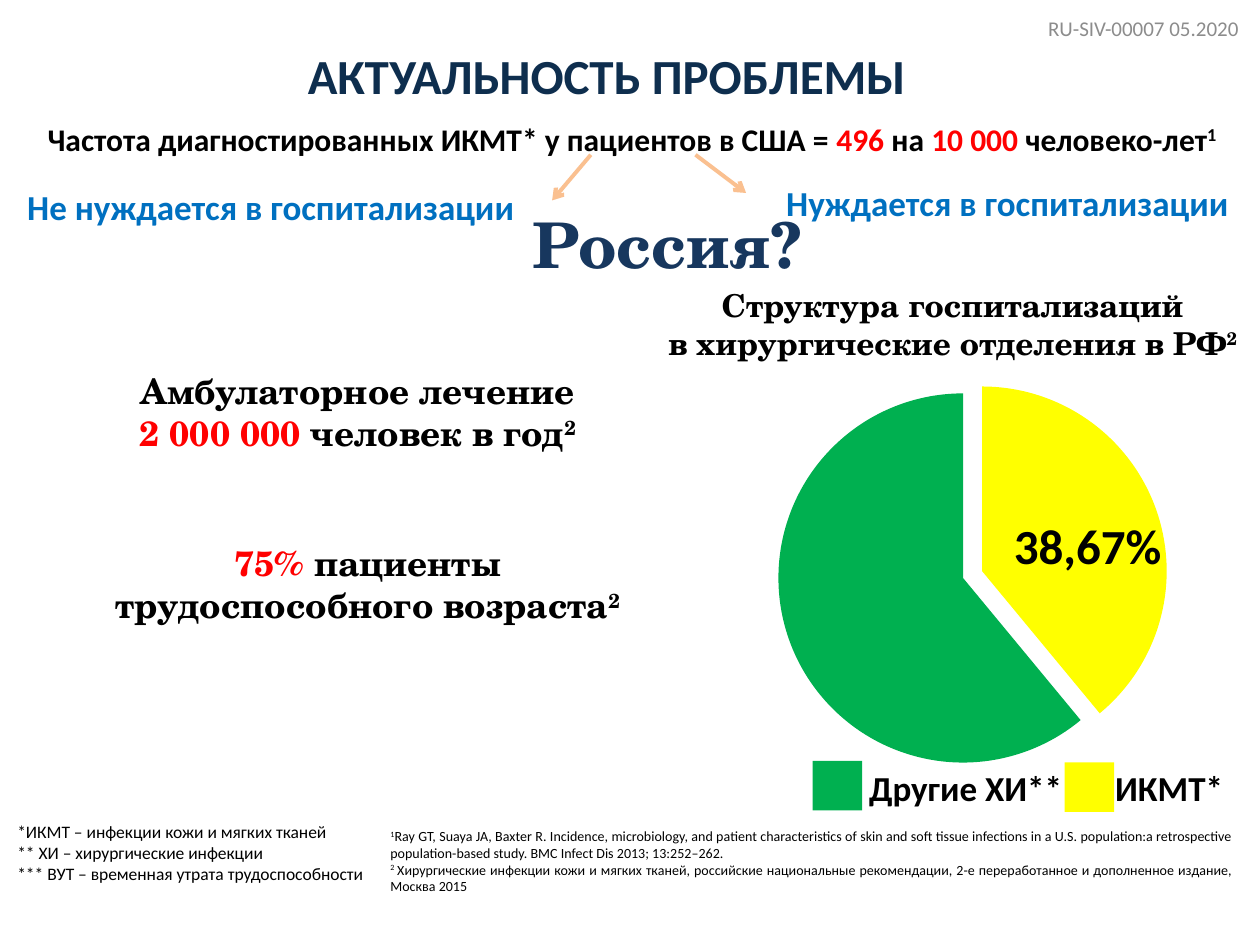
from lxml import etree
from pptx import Presentation
from pptx.chart.data import CategoryChartData
from pptx.dml.color import RGBColor
from pptx.enum.chart import XL_CHART_TYPE as ChartType
from pptx.enum.shapes import MSO_CONNECTOR as Connector, MSO_SHAPE as Shape
from pptx.enum.text import MSO_ANCHOR as Anchor, PP_ALIGN as Align
from pptx.oxml import parse_xml
from pptx.oxml.ns import nsdecls, qn
from pptx.util import Cm, Pt

COLORS = {"black": "000000", "navy": "0E2E4E", "dark blue": "17375E",
          "blue": "0070C0", "red": "FF0000", "gray": "8C8C8C",
          "peach": "FAC090", "yellow": "FFFF00", "green": "00B050"}
SANS, SERIF = "Calibri", "TeX Gyre Schola"
RED = {"color": "red"}
SUPER = {"raised": True}


def rgb(name):
    return RGBColor.from_string(COLORS[name])


class SlideBuilder:
    """Holds the default text style and the current slide."""

    style = {"name": SANS, "size": 18, "bold": True, "color": "black"}

    def __init__(self, slide):
        self.slide = slide

    def format_font(self, font, **changes):
        look = {**self.style, **changes}
        font.color.rgb = rgb(look["color"])
        values = {"name": look["name"], "size": Pt(look["size"]), "bold": look["bold"]}
        for attribute, value in values.items():
            setattr(font, attribute, value)

    def fill_frame(self, frame, paragraphs, align, **look):
        """Each paragraph is a list of plain strings or (string, changes) pairs."""
        for index, parts in enumerate(paragraphs):
            paragraph = frame.paragraphs[0] if index == 0 else frame.add_paragraph()
            paragraph.alignment = align
            for part in parts:
                words, changes = (part, {}) if isinstance(part, str) else part
                run = paragraph.add_run()
                run.text = words
                self.format_font(run.font, **{**look, **changes})
                if changes.get("raised"):
                    run.font._element.set("baseline", "30000")

    def title(self, box, words, **look):
        holder = self.slide.shapes.title
        for side, length in zip(("left", "top", "width", "height"), box):
            setattr(holder, side, Cm(length))
        holder.text_frame.vertical_anchor = Anchor.MIDDLE
        self.fill_frame(holder.text_frame, [[words]], Align.CENTER, **look)

    def text(self, box, paragraphs, align=Align.LEFT, wrap=False,
             anchor=Anchor.TOP, **look):
        frame = self.slide.shapes.add_textbox(*map(Cm, box)).text_frame
        frame.word_wrap = wrap
        frame.vertical_anchor = anchor
        self.fill_frame(frame, paragraphs, align, **look)

    def arrow(self, start, end, color, width):
        line = self.slide.shapes.add_connector(
            Connector.STRAIGHT, *map(Cm, start + end))
        line.line.color.rgb = rgb(color)
        line.line.width = Pt(width)
        etree.SubElement(line.line._get_or_add_ln(), qn("a:tailEnd"), type="arrow")
        etree.SubElement(line._element.spPr, qn("a:effectLst"))

    def swatch(self, left, top, side, color):
        square = self.slide.shapes.add_shape(
            Shape.RECTANGLE, *map(Cm, (left, top, side, side)))
        square.shadow.inherit = False
        square.fill.solid()
        square.fill.fore_color.rgb = rgb(color)
        square.line.fill.background()

    def pie(self, box, slices, explosion, plot_area):
        data = CategoryChartData()
        data.categories = [str(number + 1) for number in range(len(slices))]
        data.add_series("Series 1", [value for value, _ in slices])
        chart = self.slide.shapes.add_chart(ChartType.PIE, *map(Cm, box), data).chart
        chart.has_legend = chart.has_title = False
        self.format_font(chart.font, size=10, bold=False)
        plot = chart.plots[0]
        plot.vary_by_categories = True
        series = plot.series[0]
        for index, (_, color) in enumerate(slices):
            point = series.points[index].format
            point.fill.solid()
            point.fill.fore_color.rgb = rgb(color)
            point.line.fill.background()

        # Pull the first slice out of the pie
        first = series._element.find(qn("c:dPt"))
        first.find(qn("c:spPr")).addprevious(
            parse_xml(f'<c:explosion {nsdecls("c")} val="{explosion}"/>'))

        # Fix the place of the pie inside its frame
        plot_xml = plot._element.getparent()
        for old in plot_xml.findall(qn("c:layout")):
            plot_xml.remove(old)
        sizes = "".join(f'<c:{key} val="{value}"/>' for key, value in plot_area.items())
        plot_xml.insert(0, parse_xml(
            f'<c:layout {nsdecls("c")}><c:manualLayout><c:layoutTarget val="inner"/>'
            f'<c:xMode val="edge"/><c:yMode val="edge"/>{sizes}'
            '</c:manualLayout></c:layout>'))


def main():
    deck = Presentation()
    deck.slide_width, deck.slide_height = Cm(25.4), Cm(19.05)
    page = SlideBuilder(deck.slides.add_slide(deck.slide_layouts[5]))

    # Heading and document code
    page.title((5.36, 0.5, 13.74, 2), "АКТУАЛЬНОСТЬ ПРОБЛЕМЫ", size=28, color="navy")
    page.text((20.7, 0, 4.7, 1.12), [["RU-SIV-00007 05.2020"]], Align.CENTER,
              anchor=Anchor.MIDDLE, size=12, bold=False, color="gray")

    # Incidence, split into two groups of patients
    page.text((0.71, 2.29, 24.33, 1.02), [[
        "Частота диагностированных ИКМТ* у пациентов в США = ", ("496", RED),
        " на ", ("10 000 ", RED), "человеко-лет", ("1", SUPER)]])
    for start, end in (((11.91, 3.12), (11.13, 4.04)), ((14.02, 3.12), (15.04, 3.89))):
        page.arrow(start, end, "peach", 2.25)
    for box, group in (((15.6, 3.53, 9.5, 1.12), "Нуждается в госпитализации"),
                       ((0.3, 3.61, 10.41, 1.12), "Не нуждается в госпитализации")):
        page.text(box, [[group]], size=20, color="blue")

    # Hospital structure: pie with its legend
    page.pie((15.49, 7.44, 8.53, 8.18), [(39, "yellow"), (61, "green")], 11,
             {"x": 0.02, "y": 0.06, "w": 0.88, "h": 0.91})
    page.text((20.19, 10.26, 3.53, 1.45), [["38,67%"]], size=28)
    for swatch_left, swatch_top, color, label_left, label_width, label in (
            (21.46, 15.37, "yellow", 22.23, 2.72, "ИКМТ*"),
            (16.38, 15.34, "green", 17.27, 4.45, "Другие ХИ**")):
        page.swatch(swatch_left, swatch_top, 1, color)
        page.text((label_left, 15.32, label_width, 1.12), [[label]], size=20)
    page.text((13.16, 5.64, 12.09, 1.8), [
        ["Структура госпитализаций"],
        ["в хирургические отделения в РФ", ("2", SUPER)]], Align.CENTER, name=SERIF)

    # Russian figures
    page.text((10.49, 4.01, 6.05, 1.8), [["Россия?"]],
              name=SERIF, size=36, color="dark blue")
    page.text((0.66, 7.32, 13.11, 1.96), [
        ["Амбулаторное лечение"],
        [("2 000 000 ", RED), "человек в год", ("2", SUPER)]],
        Align.CENTER, wrap=True, name=SERIF, size=20)
    page.text((1.98, 10.8, 10.87, 1.96), [
        [("75% ", RED), "пациенты"],
        ["трудоспособного возраста", ("2", SUPER)]],
        Align.CENTER, name=SERIF, size=20)

    # Abbreviations and references
    page.text((0.1, 16.43, 7.59, 1.55), [
        ["*ИКМТ – инфекции кожи и мягких тканей"],
        ["** ХИ – хирургические инфекции"],
        ["*** ВУТ – временная утрата трудоспособности"]],
        Align.JUSTIFY, size=10, bold=False)
    page.text((7.62, 16.56, 17.5, 1.63), [
        [("1", SUPER), "Ray GT, Suaya JA, Baxter R. Incidence, microbiology, and patient "
         "characteristics of skin and soft tissue infections in a U.S. population:a "
         "retrospective population-based study. BMC Infect Dis 2013; 13:252–262."],
        [("2 ", SUPER), "Хирургические инфекции кожи и мягких тканей, российские "
         "национальные рекомендации, 2-е переработанное и дополненное издание, "
         "Москва 2015"]],
        Align.JUSTIFY, wrap=True, size=8, bold=False)

    deck.save("out.pptx")


if __name__ == "__main__":
    main()
